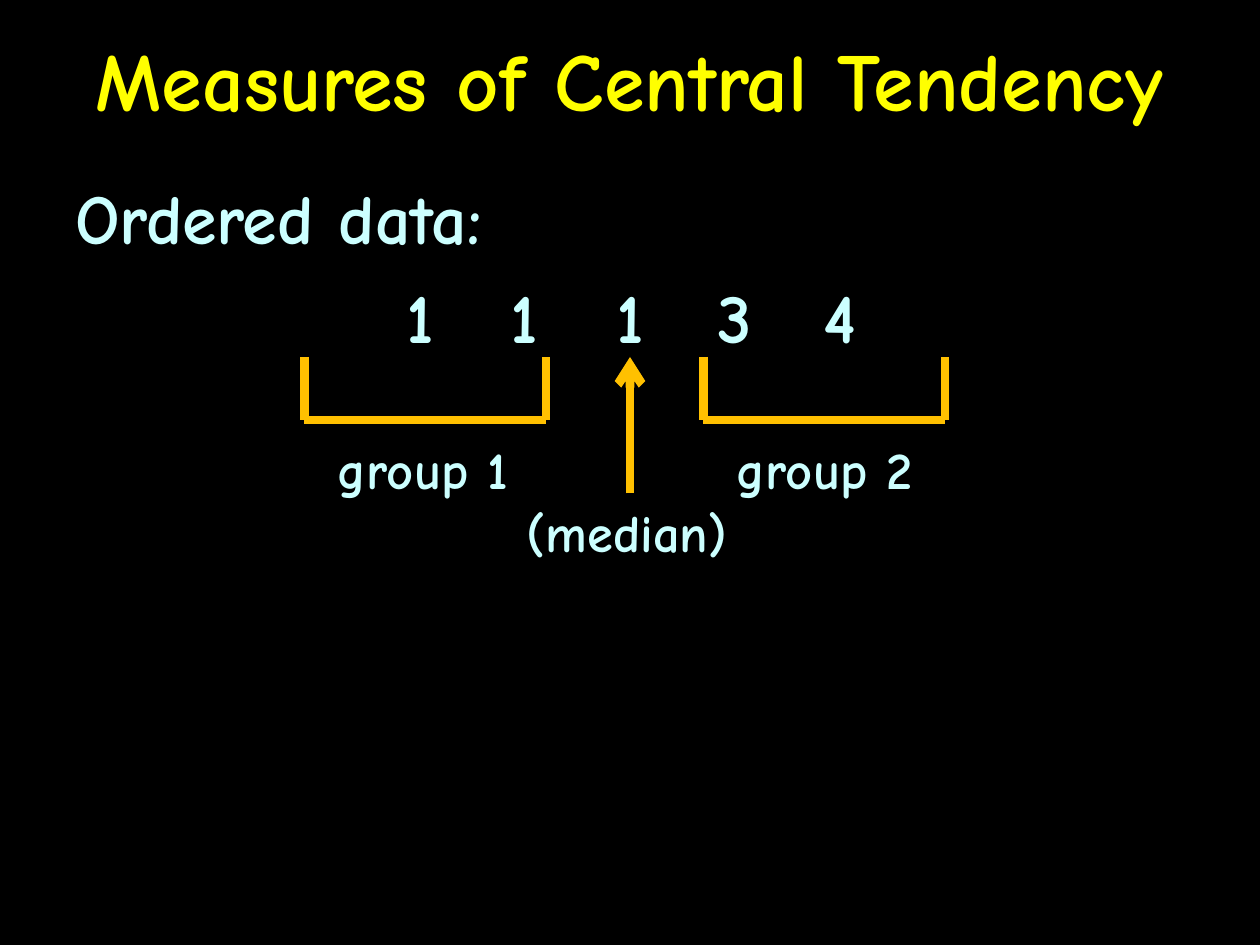
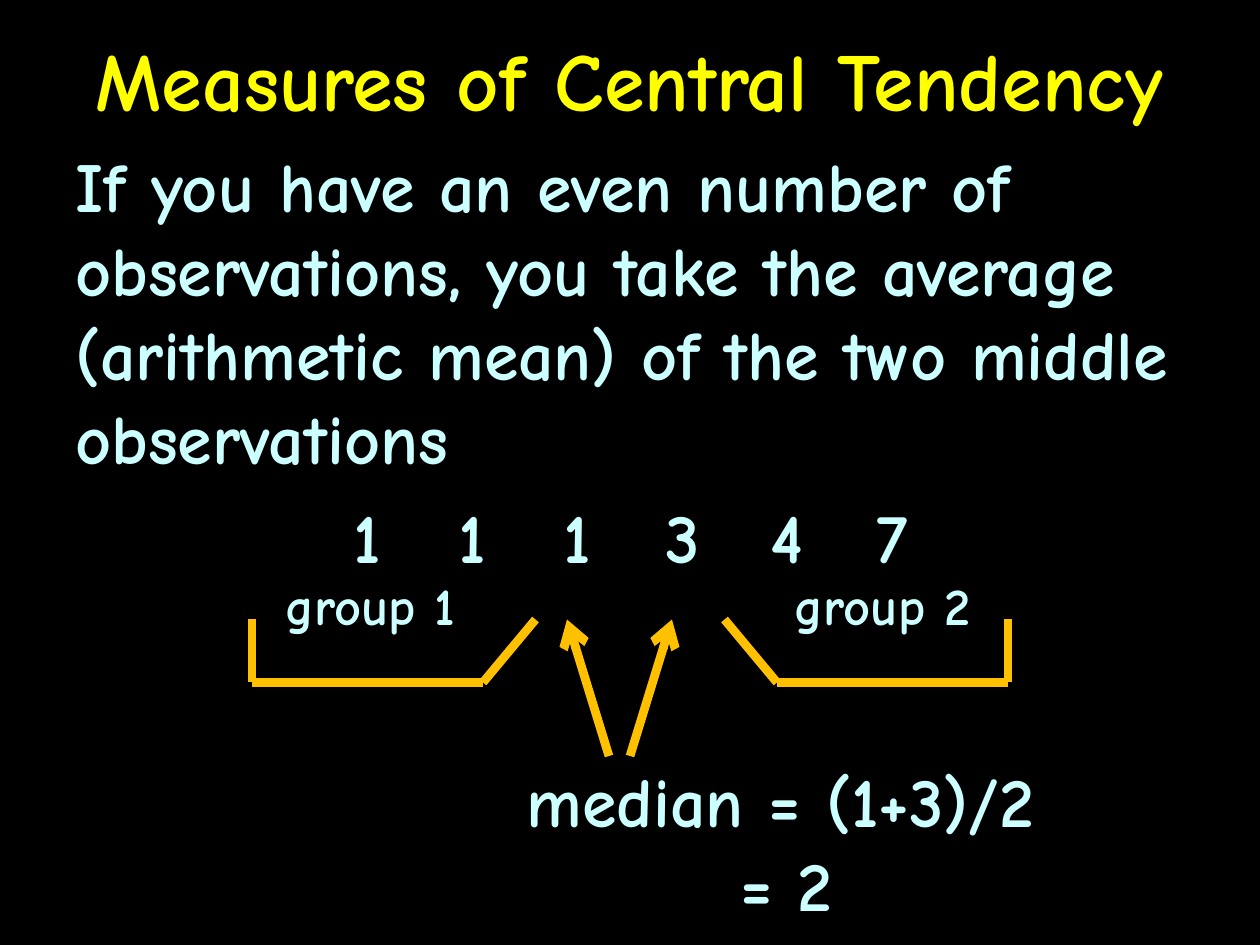
from dataclasses import dataclass
from itertools import pairwise

from lxml.etree import SubElement
from pptx import Presentation
from pptx.dml.color import RGBColor as Color
from pptx.enum.shapes import MSO_CONNECTOR as Connector
from pptx.enum.text import MSO_ANCHOR as Anchor, PP_ALIGN as Align
from pptx.oxml.ns import qn
from pptx.util import Pt

EMU_PER_PX = 7620
WIDTH, HEIGHT = 1200, 900


@dataclass(frozen=True)
class Theme:
    font: str = "Comic Neue"
    background: Color = Color(0x00, 0x00, 0x00)
    title: Color = Color(0xFF, 0xFF, 0x00)
    text: Color = Color(0xCC, 0xFF, 0xFF)
    line: Color = Color(0xFF, 0xC0, 0x00)
    title_size: int = 47
    body_size: int = 40
    label_size: int = 30
    line_width: int = 5
    space_before: float = 8.5


def px(length):
    return round(length * EMU_PER_PX)


class Deck:
    inset = 12
    body_left = 60
    number_pitch = 100

    def __init__(self, theme):
        self.theme = theme
        self.presentation = Presentation()
        self.presentation.slide_width = px(WIDTH)
        self.presentation.slide_height = px(HEIGHT)
        self.slide = None

    def add_slide(self, title):
        blank = self.presentation.slide_layouts[6]
        self.slide = self.presentation.slides.add_slide(blank)
        fill = self.slide.background.fill
        fill.solid()
        fill.fore_color.rgb = self.theme.background
        frame = self.text(title, 0, 0, WIDTH, 150, self.theme.title_size, self.theme.title)
        frame.vertical_anchor = Anchor.MIDDLE
        frame.paragraphs[0].alignment = Align.CENTER

    def text(self, content, left, top, width, height, size, color=None):
        box = self.slide.shapes.add_textbox(px(left), px(top), px(width), px(height))
        frame = box.text_frame
        frame.word_wrap = True
        frame.text = content
        for paragraph in frame.paragraphs:
            for run in paragraph.runs:
                run.font.name = self.theme.font
                run.font.size = Pt(size)
                run.font.bold = True
                run.font.color.rgb = color or self.theme.text
        return frame

    def label(self, content, left, top):
        self.text(content, left, top, 230, 73, self.theme.label_size)

    def body(self, statement, numbers, top):
        number_row = "".join(f"\t{number}" for number in numbers)
        frame = self.text(f"{statement}\n{number_row}", self.body_left, top,
                          WIDTH - 2 * self.body_left, 740, self.theme.body_size)
        row = frame.paragraphs[1]
        row.space_before = Pt(self.theme.space_before)
        first = (WIDTH - (len(numbers) - 1) * self.number_pitch) / 2
        tabs = SubElement(row._p.get_or_add_pPr(), qn("a:tabLst"))
        for index in range(len(numbers)):
            position = first + index * self.number_pitch - self.body_left - self.inset
            SubElement(tabs, qn("a:tab"), pos=str(px(position)), algn="ctr")

    def equation(self, lines, left, top, indent):
        frame = self.text("\n".join(lines), left, top, 622, 174, self.theme.body_size)
        frame.paragraphs[1]._p.get_or_add_pPr().set("marL", str(px(indent)))

    def line(self, start, end):
        connector = self.slide.shapes.add_connector(
            Connector.STRAIGHT, *map(px, start), *map(px, end))
        connector.line.color.rgb = self.theme.line
        connector.line.width = Pt(self.theme.line_width)
        SubElement(connector._element.spPr, qn("a:effectLst"))
        return connector

    def arrow(self, start, end):
        connector = self.line(start, end)
        SubElement(connector.line._get_or_add_ln(), qn("a:tailEnd"), type="arrow")

    def bracket(self, *corners):
        for start, end in pairwise(corners):
            self.line(start, end)


def odd_count_slide(deck, title):
    deck.add_slide(title)
    deck.body("Ordered data:", [1, 1, 1, 3, 4], 160)
    top, bottom = 340, 400
    for name, left, right in (("group 1", 290, 520), ("group 2", 670, 900)):
        deck.bracket((left, top), (left, bottom), (right, bottom), (right, top))
        deck.label(name, left + 20, 410)
    deck.arrow((600, 470), (600, top))
    deck.label("(median)", 490, 470)


def even_count_slide(deck, title):
    deck.add_slide(title)
    deck.body("If you have an even number of observations, you take the average "
              "(arithmetic mean) of the two middle observations",
              [1, 1, 1, 3, 4, 7], 130)
    top, bottom = 590, 650
    groups = (("group 1", 260, 240, 460, 510), ("group 2", 745, 960, 740, 690))
    for name, label_left, outer, inner, tip in groups:
        deck.label(name, label_left, 540)
        deck.bracket((outer, top), (outer, bottom), (inner, bottom), (tip, top))
    for start, end in ((580, 540), (600, 640)):
        deck.arrow((start, 720), (end, top))
    deck.equation(["median = (1+3)/2", "= 2"], 490, 716, 203)


def main():
    deck = Deck(Theme())
    title = "Measures of Central Tendency"
    odd_count_slide(deck, title)
    even_count_slide(deck, title)
    deck.presentation.save("out.pptx")


if __name__ == "__main__":
    main()
